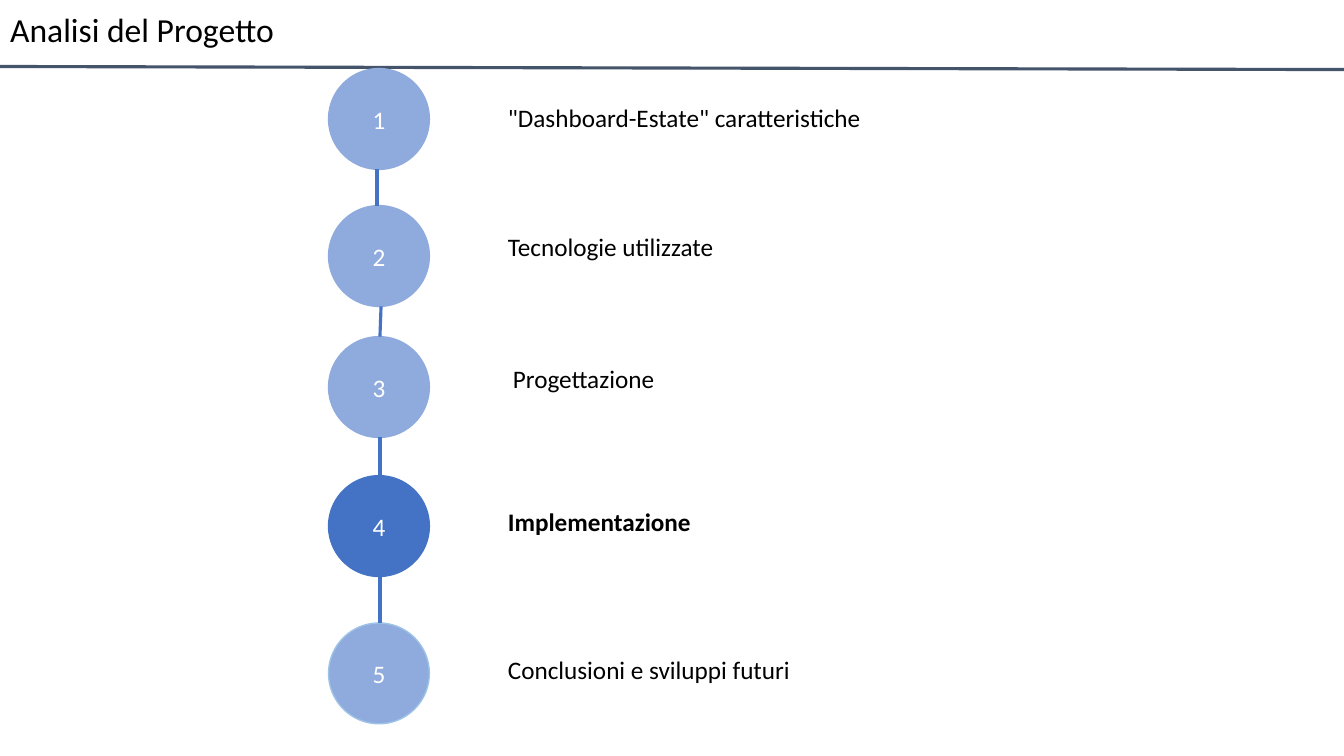
from itertools import pairwise

from lxml.etree import SubElement
from pptx import Presentation
from pptx.dml.color import RGBColor
from pptx.enum.shapes import MSO_CONNECTOR, MSO_SHAPE
from pptx.enum.text import MSO_ANCHOR, MSO_AUTO_SIZE, PP_ALIGN
from pptx.oxml.ns import qn
from pptx.util import Pt

BLACK = RGBColor(0x00, 0x00, 0x00)
WHITE = RGBColor(0xFF, 0xFF, 0xFF)
SLATE = RGBColor(0x44, 0x54, 0x6A)
BLUE = RGBColor(0x44, 0x72, 0xC4)
PALE = RGBColor(0x8F, 0xAA, 0xDC)
SKY = RGBColor(0x9D, 0xC3, 0xE6)

DOT = 72
DOT_LEFT = 234.7

STEPS = [
    ('"Dashboard-Estate" caratteristiche', 49, 355.7, 69.8, PALE, PALE),
    ("Tecnologie utilizzate", 146.9, 355.7, 162, PALE, PALE),
    ("Progettazione", 240.5, 359.3, 255.6, PALE, PALE),
    ("Implementazione", 339.8, 355.7, 357.8, BLUE, BLUE),
    ("Conclusioni e sviluppi futuri", 445, 355.7, 463.7, PALE, SKY),
]
LINK_ENDS = [(269.3, 269.3), (272.2, 271.4), (271.4, 271.4), (271.4, 271.4)]


class Deck:
    face = "Calibri"
    size = 18
    weight = 2.25

    def __init__(self, show):
        self.slide = show.slides.add_slide(show.slide_layouts[5])

    def fill_text(self, frame, text, size, color, align, bold=False):
        frame.word_wrap = True
        para = frame.paragraphs[0]
        para.text = text
        para.alignment = align
        font = para.font
        font.name = self.face
        font.size = Pt(size)
        font.bold = bold
        font.color.rgb = color
        return para

    def title(self, text):
        head = self.slide.shapes.title
        head.left, head.top = Pt(0), Pt(-0.7)
        head.width, head.height = Pt(893.5), Pt(46.8)
        frame = head.text_frame
        frame.auto_size = MSO_AUTO_SIZE.NONE
        frame.vertical_anchor = MSO_ANCHOR.MIDDLE
        para = self.fill_text(frame, text, 24, BLACK, PP_ALIGN.LEFT)
        para.line_spacing = 0.9

    def line(self, x1, y1, x2, y2, color):
        link = self.slide.shapes.add_connector(
            MSO_CONNECTOR.STRAIGHT, Pt(x1), Pt(y1), Pt(x2), Pt(y2))
        link.line.color.rgb = color
        link.line.width = Pt(self.weight)
        SubElement(link._element.spPr, qn("a:effectLst"))

    def dot(self, text, top, fill, edge):
        disc = self.slide.shapes.add_shape(
            MSO_SHAPE.OVAL, Pt(DOT_LEFT), Pt(top), Pt(DOT), Pt(DOT))
        disc.shadow.inherit = False
        disc.fill.solid()
        disc.fill.fore_color.rgb = fill
        disc.line.color.rgb = edge
        disc.line.width = Pt(1)
        frame = disc.text_frame
        frame.vertical_anchor = MSO_ANCHOR.MIDDLE
        self.fill_text(frame, text, self.size, WHITE, PP_ALIGN.CENTER)

    def label(self, text, left, top, bold):
        box = self.slide.shapes.add_textbox(
            Pt(left), Pt(top), Pt(357.8), Pt(29))
        frame = box.text_frame
        frame.auto_size = MSO_AUTO_SIZE.SHAPE_TO_FIT_TEXT
        self.fill_text(frame, text, self.size, BLACK, PP_ALIGN.LEFT, bold)


def main():
    show = Presentation()
    show.slide_width, show.slide_height = Pt(960), Pt(540)
    deck = Deck(show)
    deck.title("Analisi del Progetto")
    deck.line(-3.6, 47.5, 960.5, 49.7, SLATE)
    for num, (text, top, left, y, fill, edge) in enumerate(STEPS, 1):
        deck.dot(str(num), top, fill, edge)
        deck.label(text, left, y, fill == BLUE)
    tops = [step[1] for step in STEPS]
    for (x1, x2), (top, below) in zip(LINK_ENDS, pairwise(tops)):
        deck.line(x1, top + DOT, x2, below, BLUE)
    show.save("out.pptx")


if __name__ == "__main__":
    main()
